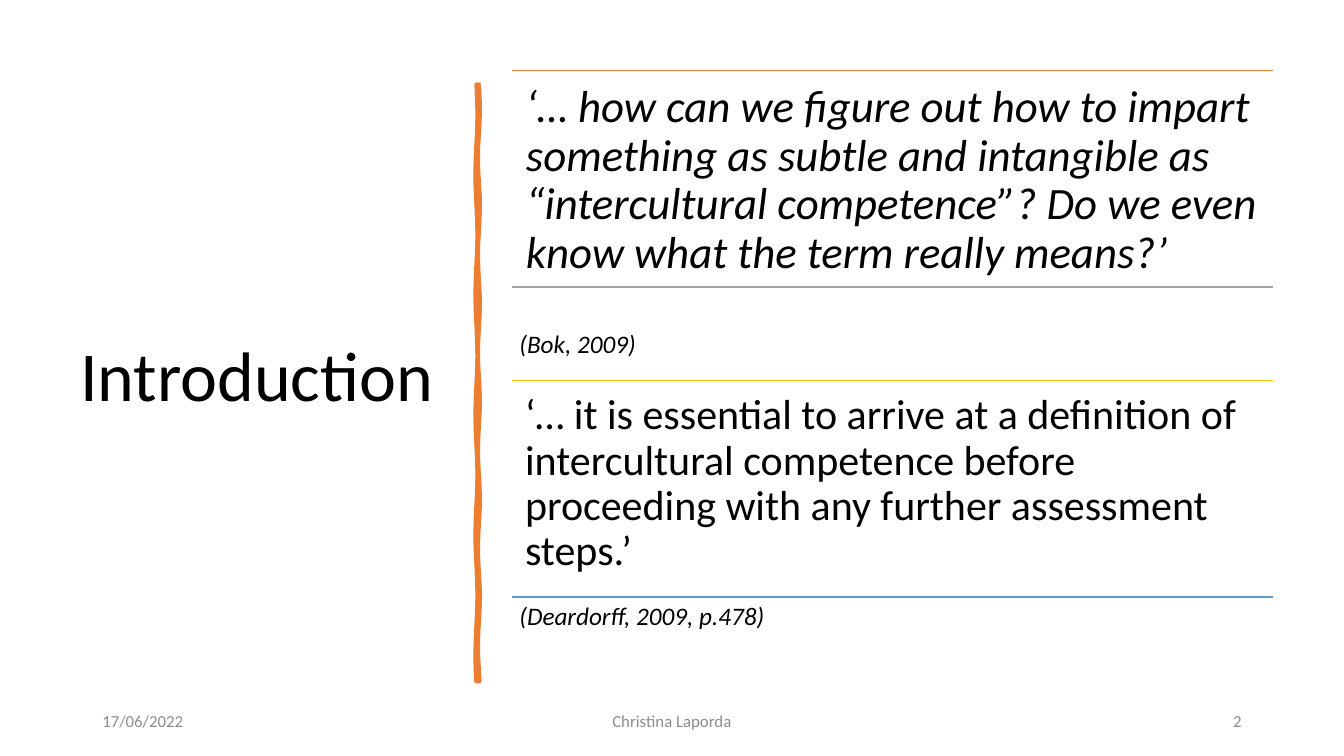
from math import sin

from lxml import etree
from pptx import Presentation
from pptx.dml.color import RGBColor
from pptx.enum.shapes import MSO_CONNECTOR
from pptx.enum.text import MSO_ANCHOR, MSO_AUTO_SIZE, PP_ALIGN
from pptx.oxml.ns import qn
from pptx.util import Pt

BLACK = RGBColor(0x00, 0x00, 0x00)
MUTED = RGBColor(0x8C, 0x8C, 0x8C)
ORANGE = RGBColor(0xED, 0x7D, 0x31)
GRAY = RGBColor(0xA5, 0xA5, 0xA5)
GOLD = RGBColor(0xFF, 0xC0, 0x00)
BLUE = RGBColor(0x5B, 0x9B, 0xD5)
FONT = "Calibri"


def write(shape, text, size, color=BLACK, italic=False, align=PP_ALIGN.LEFT,
          anchor=MSO_ANCHOR.TOP, inset=7.2, inset_y=None, spacing=0.9):
    frame = shape.text_frame
    frame.word_wrap = True
    frame.auto_size = MSO_AUTO_SIZE.NONE
    frame.vertical_anchor = anchor
    frame.margin_left = frame.margin_right = Pt(inset)
    frame.margin_top = frame.margin_bottom = Pt(inset if inset_y is None else inset_y)
    paragraph = frame.paragraphs[0]
    paragraph.alignment = align
    paragraph.line_spacing = spacing
    run = paragraph.add_run()
    run.text = text
    run.font.name = FONT
    run.font.size = Pt(size)
    run.font.italic = italic
    run.font.color.rgb = color


def add_text(slide, box, text, size, **style):
    write(slide.shapes.add_textbox(*map(Pt, box)), text, size, **style)


def add_rule(slide, left, top, width, color):
    rule = slide.shapes.add_connector(
        MSO_CONNECTOR.STRAIGHT, Pt(left), Pt(top), Pt(left + width), Pt(top))
    rule.line.color.rgb = color
    rule.line.width = Pt(1)
    etree.SubElement(rule._element.spPr, qn("a:effectLst"))


def add_heading(slide, box, text):
    title = slide.shapes.title
    title.left, title.top, title.width, title.height = map(Pt, box)
    write(title, text, 50, anchor=MSO_ANCHOR.MIDDLE, inset_y=3.6)


def add_brush_stroke(slide, box):
    """Draw a thin upright band whose two edges waver like a hand-made stroke."""
    left, top, width, height = box
    steps = 48
    levels = [(i, top + height * i / steps) for i in range(steps + 1)]
    right_edge = [(left + width + 0.7 * sin(0.8 * i), y) for i, y in levels]
    left_edge = [(left + 0.7 * sin(0.65 * i), y) for i, y in reversed(levels)]
    outline = [(round(x * 100), round(y * 100)) for x, y in right_edge + left_edge]
    builder = slide.shapes.build_freeform(*outline[0], scale=Pt(1) / 100)
    builder.add_line_segments(outline[1:], close=True)
    stroke = builder.convert_to_shape()
    stroke.shadow.inherit = False
    stroke.fill.solid()
    stroke.fill.fore_color.rgb = ORANGE
    stroke.line.color.rgb = ORANGE
    stroke.line.width = Pt(3.25)


def add_quotation(slide, box, quote, source, rule_colors, source_gap, **style):
    """Place a quote between two rules, with its source below."""
    left, top, width, height = box
    for y, color in zip((top, top + height), rule_colors):
        add_rule(slide, left, y, width, color)
    add_text(slide, box, quote, **style)
    add_text(slide, (left, top + height + source_gap, width, 60), source, 18,
             italic=True, inset=5)


def add_footer(slide, top, height):
    columns = [
        (66, 216, "17/06/2022", PP_ALIGN.LEFT),
        (318, 324, "Christina Laporda", PP_ALIGN.CENTER),
        (678, 216, "2", PP_ALIGN.RIGHT),
    ]
    for left, width, text, align in columns:
        add_text(slide, (left, top, width, height), text, 12, color=MUTED,
                 align=align, anchor=MSO_ANCHOR.MIDDLE, inset_y=3.6, spacing=1.0)


def main():
    deck = Presentation()
    deck.slide_width, deck.slide_height = Pt(960), Pt(540)
    slide = deck.slides.add_slide(deck.slide_layouts[5])

    # Heading and divider
    add_heading(slide, (50, 50.5, 269, 440), "Introduction")
    add_brush_stroke(slide, (340.5, 60.5, 1.5, 426))

    # Quotations
    add_quotation(
        slide, (366, 50.5, 543.5, 154.5),
        "‘… how can we figure out how to impart something as subtle and intangible "
        "as “intercultural competence”? Do we even know what the term really means?’",
        "(Bok, 2009)", (ORANGE, GRAY), 27, size=32, italic=True, inset=9.6)
    add_quotation(
        slide, (366, 272, 543.5, 154.5),
        "‘… it is essential to arrive at a definition of intercultural competence "
        "before proceeding with any further assessment steps.’",
        "(Deardorff, 2009, p.478)", (GOLD, BLUE), 0, size=30, inset=9)

    # Footer
    add_footer(slide, 500.5, 28.75)
    deck.save("out.pptx")


if __name__ == "__main__":
    main()
